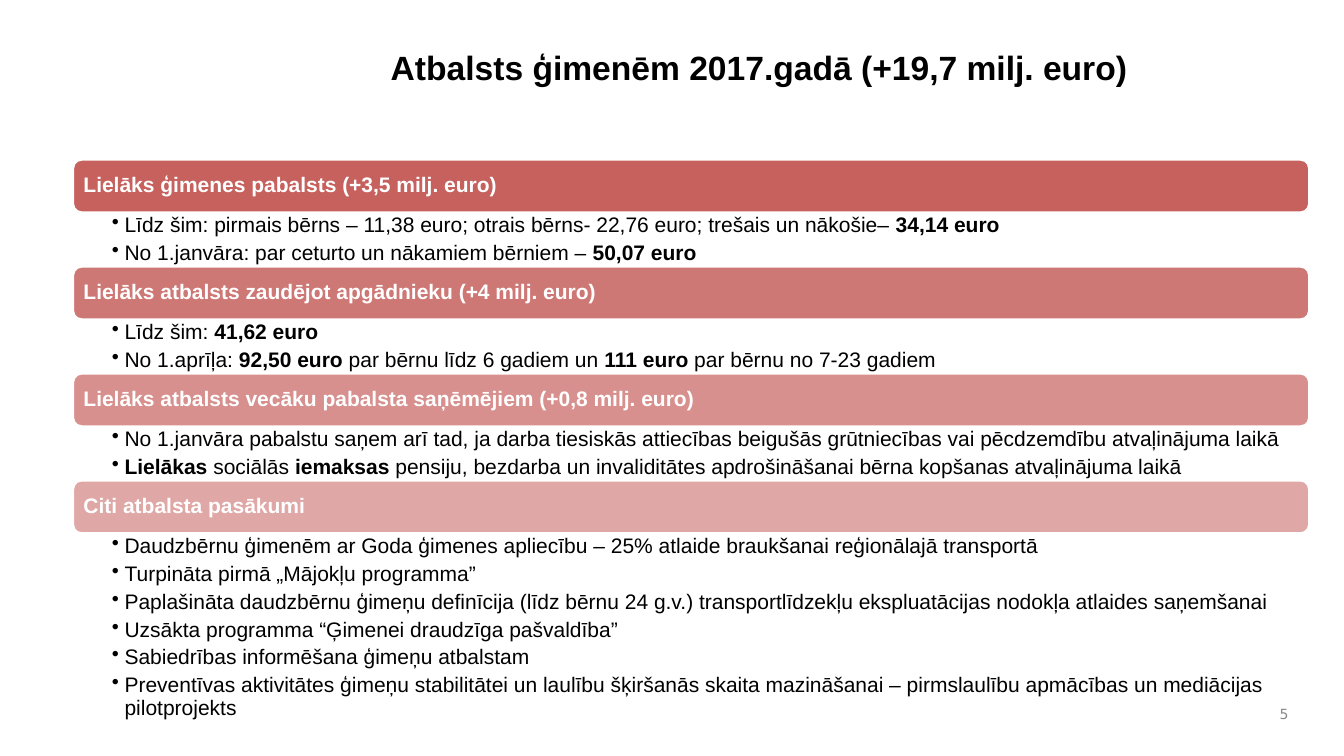
from dataclasses import dataclass

from lxml import etree
from pptx import Presentation
from pptx.dml.color import RGBColor
from pptx.enum.shapes import MSO_SHAPE as Shape
from pptx.enum.text import MSO_ANCHOR as Anchor, PP_ALIGN as Align
from pptx.oxml.ns import qn
from pptx.util import Pt


@dataclass(frozen=True)
class Theme:
    band = RGBColor(0xC0, 0x50, 0x4D)
    white = RGBColor(0xFF, 0xFF, 0xFF)
    black = RGBColor(0, 0, 0)
    grey = RGBColor(0x89, 0x89, 0x89)
    font = "Arial"
    number_font = "DejaVu Sans"
    title_size = Pt(24)
    text_size = Pt(15)
    number_size = Pt(10)


theme = Theme()

# Heading, band opacity in percent, points; ** encloses bold words
SECTIONS = [
    ("Lielāks ģimenes pabalsts (+3,5 milj. euro)", 90, [
        "Līdz šim: pirmais bērns – 11,38 euro; otrais bērns- 22,76 euro; "
        "trešais un nākošie– **34,14 euro**",
        "No 1.janvāra: par ceturto un nākamiem bērniem – **50,07 euro**",
    ]),
    ("Lielāks atbalsts zaudējot apgādnieku (+4 milj. euro)", 77, [
        "Līdz šim: **41,62 euro**",
        "No 1.aprīļa: **92,50 euro **par bērnu līdz 6 gadiem un "
        "**111 euro **par bērnu no 7-23 gadiem",
    ]),
    ("Lielāks atbalsts vecāku pabalsta saņēmējiem (+0,8 milj. euro)", 63, [
        "No 1.janvāra pabalstu saņem arī tad, ja darba tiesiskās attiecības "
        "beigušās grūtniecības vai pēcdzemdību atvaļinājuma laikā",
        "**Lielākas** sociālās **iemaksas** pensiju, bezdarba un invaliditātes "
        "apdrošināšanai bērna kopšanas atvaļinājuma laikā",
    ]),
    ("Citi atbalsta pasākumi", 50, [
        "Daudzbērnu ģimenēm ar Goda ģimenes apliecību – 25% atlaide braukšanai "
        "reģionālajā transportā",
        "Turpināta pirmā „Mājokļu programma”",
        "Paplašināta daudzbērnu ģimeņu definīcija (līdz bērnu 24 g.v.) "
        "transportlīdzekļu ekspluatācijas nodokļa atlaides saņemšanai",
        "Uzsākta programma “Ģimenei draudzīga pašvaldība”",
        "Sabiedrības informēšana ģimeņu atbalstam",
        "Preventīvas aktivitātes ģimeņu stabilitātei un laulību šķiršanās skaita "
        "mazināšanai – pirmslaulību apmācības un mediācijas pilotprojekts",
    ]),
]
LEFT, TOP, WIDTH = 52, 113.8, 883.4
ROW = 38.2
LAST_ROW = 157


def prepare_frame(shape, insets, anchor=Anchor.TOP):
    """Wrap the text and set left, top, right and bottom insets in points."""
    frame = shape.text_frame
    frame.word_wrap = True
    frame.vertical_anchor = anchor
    (frame.margin_left, frame.margin_top,
     frame.margin_right, frame.margin_bottom) = map(Pt, insets)
    return frame


def style_font(paragraph, size, color, bold=False, name=theme.font):
    font = paragraph.font
    font.name, font.size, font.bold = name, size, bold
    font.color.rgb = color


deck = Presentation()
deck.slide_width, deck.slide_height = Pt(960), Pt(540)
slide = deck.slides.add_slide(deck.slide_layouts[6])

title = slide.shapes.add_textbox(Pt(272), Pt(30.2), Pt(640), Pt(81.4))
heading = prepare_frame(title, (7.2, 3.6, 7.2, 3.6)).paragraphs[0]
heading.text = "Atbalsts ģimenēm 2017.gadā (+19,7 milj. euro)"
style_font(heading, theme.title_size, theme.black, bold=True)

for index, (section, opacity, points) in enumerate(SECTIONS):
    top = TOP + index * 2 * ROW
    band = slide.shapes.add_shape(
        Shape.ROUNDED_RECTANGLE, Pt(LEFT), Pt(top), Pt(WIDTH), Pt(ROW))
    band.shadow.inherit = False
    band.fill.solid()
    band.fill.fore_color.rgb = theme.band
    band_color = band.fill._xPr.find(".//" + qn("a:srgbClr"))
    etree.SubElement(band_color, qn("a:alpha"), val=str(opacity * 1000))
    band.line.color.rgb = theme.white
    band.line.width = Pt(2)
    label = prepare_frame(band, (5.8, 4, 5.8, 4), Anchor.MIDDLE).paragraphs[0]
    label.text = section
    label.alignment = Align.LEFT
    label.line_spacing = 0.9
    style_font(label, theme.text_size, theme.white, bold=True)

    height = LAST_ROW if index == len(SECTIONS) - 1 else ROW
    details = slide.shapes.add_textbox(
        Pt(LEFT), Pt(top + ROW), Pt(WIDTH), Pt(height))
    frame = prepare_frame(details, (28, 1.5, 8.6, 1.5))
    for number, point in enumerate(points):
        item = frame.add_paragraph() if number else frame.paragraphs[0]
        item.level = 1
        item.line_spacing = 0.9
        item.space_after = Pt(3.6)
        properties = item._p.get_or_add_pPr()
        properties.set("marL", str(Pt(9)))
        properties.set("indent", str(-Pt(9)))
        etree.SubElement(properties, qn("a:buChar"), char="•")
        style_font(item, theme.text_size, theme.black)
        for part, words in enumerate(point.split("**")):
            if words:
                run = item.add_run()
                run.text = words
                run.font.bold = part % 2 == 1

page = slide.shapes.add_textbox(Pt(895.7), Pt(498.2), Pt(31.7), Pt(23.8))
page_number = prepare_frame(page, (7.2, 3.6, 7.2, 3.6), Anchor.MIDDLE).paragraphs[0]
page_number.text = "5"
page_number.alignment = Align.RIGHT
style_font(page_number, theme.number_size, theme.grey, name=theme.number_font)

deck.save("out.pptx")
